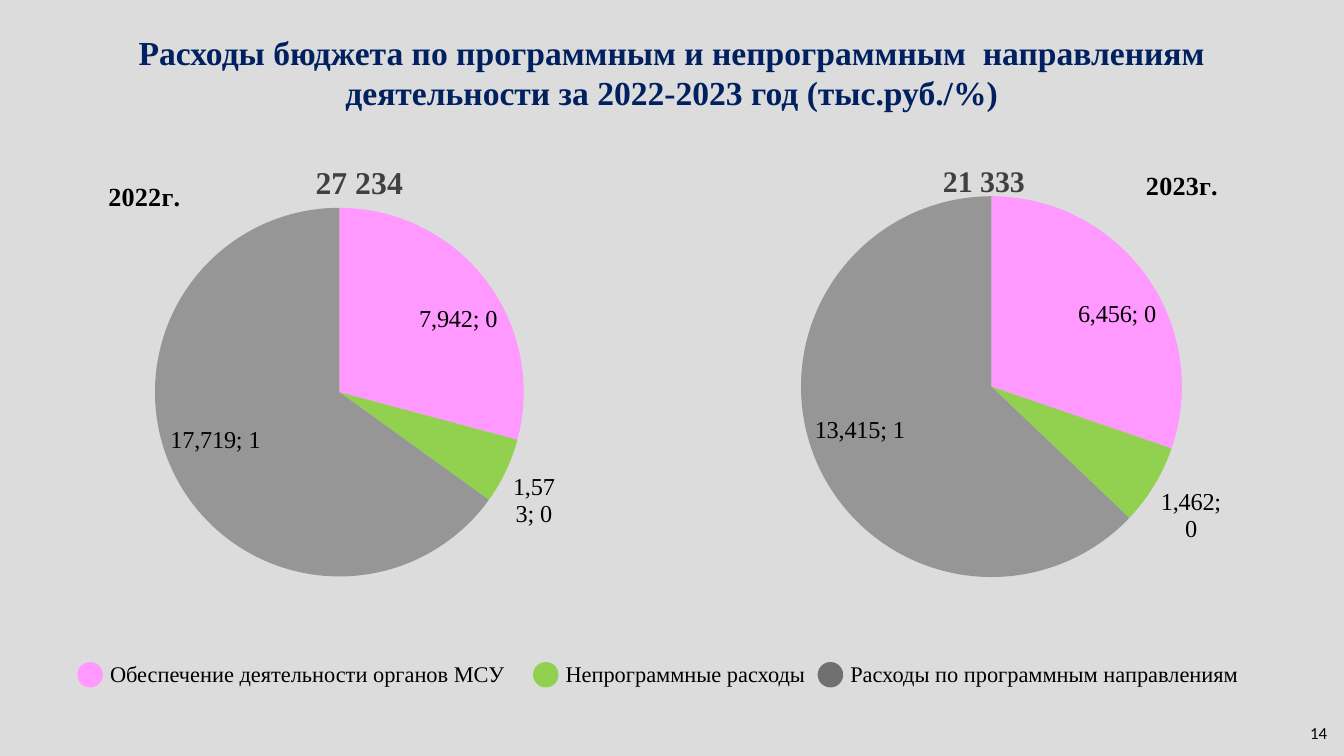
from lxml import etree
from pptx import Presentation
from pptx.chart import data as chart_data
from pptx.dml import color
from pptx.enum import chart as chart_enum, shapes, text
from pptx.oxml import ns
from pptx.util import Cm, Pt

SERIF = "Times New Roman"
PINK, GREEN, GREY = "FF99FF", "92D050", "969696"


def rgb(value):
    return color.RGBColor.from_string(value)


def style_font(font, size, hue="000000", bold=False, name=SERIF):
    font.name, font.size, font.bold = name, Pt(size), bold
    font.color.rgb = rgb(hue)


def add_text(page, words, place, size, hue="000000", bold=False, name=SERIF,
             align=text.PP_ALIGN.LEFT, wrap=True):
    box = page.shapes.add_textbox(*map(Cm, place))
    frame = box.text_frame
    frame.word_wrap = wrap
    frame.vertical_anchor = text.MSO_ANCHOR.MIDDLE
    frame.text = words
    para = frame.paragraphs[0]
    para.alignment = align
    style_font(para.runs[0].font, size, hue, bold, name)


def set_layout(parent, position, **fractions):
    """Place a chart part by fractions of the chart area."""
    layout = parent.find(ns.qn("c:layout"))
    if layout is None:
        layout = etree.Element(ns.qn("c:layout"))
        parent.insert(position, layout)
    manual = etree.SubElement(layout, ns.qn("c:manualLayout"))
    if "w" in fractions:
        etree.SubElement(manual, ns.qn("c:layoutTarget"), val="inner")
    for axis in "xy":
        etree.SubElement(manual, ns.qn(f"c:{axis}Mode"), val="edge")
    for key, value in fractions.items():
        etree.SubElement(manual, ns.qn(f"c:{key}"), val=str(value))


def add_pie(page, year, values, place, title_at, plot_area):
    source = chart_data.CategoryChartData(number_format="#,##0")
    source.categories = ["1", "2", "3"]
    source.add_series("Series 1", values)
    chart = page.shapes.add_chart(
        chart_enum.XL_CHART_TYPE.PIE, *map(Cm, place), source).chart
    style_font(chart.font, 18, name="Calibri")
    chart.has_legend = False

    # Year and plot position
    frame = chart.chart_title.text_frame
    frame.text = year
    style_font(frame.paragraphs[0].runs[0].font, 14, bold=True)
    title = chart.chart_title._element
    set_layout(title, 1, x=title_at[0], y=title_at[1])
    plot = chart.plots[0]
    set_layout(plot._element.getparent(), 0, **dict(zip("xywh", plot_area)))

    # Slices
    plot.vary_by_categories = True
    for index, hue in enumerate((PINK, GREEN, GREY)):
        look = plot.series[0].points[index].format
        look.fill.solid()
        look.fill.fore_color.rgb = rgb(hue)
        look.line.fill.background()

    # Value and share labels
    labels = plot.series[0].data_labels
    labels.show_value = labels.show_percentage = True
    labels.number_format = "#,##0"
    labels.number_format_is_linked = False
    labels.position = chart_enum.XL_LABEL_POSITION.BEST_FIT
    style_font(labels.font, 13)
    separator = etree.Element(ns.qn("c:separator"))
    separator.text = "; "
    labels._element.find(ns.qn("c:showBubbleSize")).addnext(separator)


def add_legend_entry(page, words, hue, left, width):
    dot = page.shapes.add_shape(
        shapes.MSO_SHAPE.FLOWCHART_CONNECTOR,
        Cm(left), Cm(12.55), Cm(0.41), Cm(0.41))
    dot.shadow.inherit = False
    dot.fill.solid()
    dot.fill.fore_color.rgb = dot.line.color.rgb = rgb(hue)
    dot.line.width = Pt(2)
    add_text(page, words, (left + 0.33, 12.35, width, 0.76), 12)


def main():
    deck = Presentation()
    deck.slide_width, deck.slide_height = Cm(25.4), Cm(14.29)
    page = deck.slides.add_slide(deck.slide_layouts[6])
    page.background.fill.solid()
    page.background.fill.fore_color.rgb = rgb("DCDCDC")
    center = text.PP_ALIGN.CENTER

    # Heading
    add_text(page, "Расходы бюджета по программным и непрограммным  направлениям "
             "деятельности за 2022-2023 год (тыс.руб./%)",
             (1.27, 0.36, 22.86, 2), 18, "002060", True, align=center)

    # Spending by year
    add_pie(page, "2022г.", (7942, 1573, 17719), (1.09, 2.95, 9.68, 8.84),
            (0.09, 0.04), (0.19, 0.02, 0.72, 0.97))
    add_pie(page, "2023г.", (6456, 1462, 13415), (13.89, 2.74, 9.6, 8.79),
            (0.8, 0.04), (0.13, 0.05, 0.75, 0.94))

    # Yearly totals
    add_text(page, "27 234", (4.29, 2.95, 5, 0.99), 17, "404040", True, align=center)
    add_text(page, "21 333", (16.69, 2.95, 3.81, 0.94), 16, "404040", True, align=center)

    # Shared legend
    add_legend_entry(page, "Обеспечение деятельности органов МСУ", PINK, 1.5, 8.2)
    add_legend_entry(page, "Непрограммные расходы", GREEN, 10.11, 5.2)
    add_legend_entry(page, "Расходы по программным направлениям", "707070", 15.49, 8.2)

    # Page number
    add_text(page, "14", (24.51, 13.54, 0.84, 0.64), 9, name="Calibri", wrap=False)

    deck.save("out.pptx")


if __name__ == "__main__":
    main()
